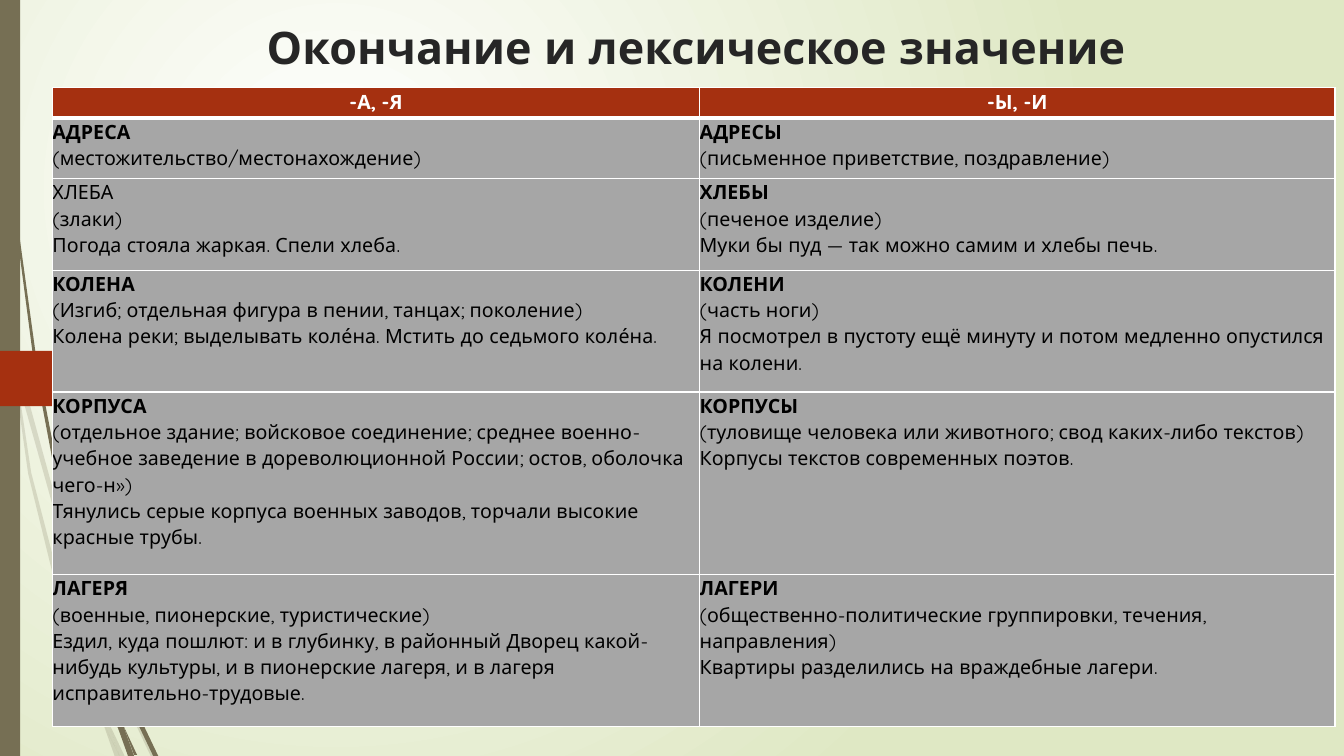
from dataclasses import dataclass

from lxml import etree
from pptx import Presentation
from pptx.dml.color import RGBColor
from pptx.enum.shapes import MSO_SHAPE
from pptx.enum.text import MSO_ANCHOR, PP_ALIGN
from pptx.oxml.ns import qn
from pptx.util import Inches, Pt

RECTANGLE = MSO_SHAPE.RECTANGLE
BOTTOM = MSO_ANCHOR.BOTTOM
LEFT, CENTER = PP_ALIGN.LEFT, PP_ALIGN.CENTER


@dataclass(frozen=True)
class Theme:
    font: str = "Quicksand"
    title_size: int = 32
    table_size: int = 14
    line_spacing: float = 1.07
    title: str = "262626"
    ink: str = "000000"
    white: str = "FFFFFF"
    meadow: str = "DFE8C4"
    olive: str = "766F54"
    rust: str = "A53010"
    grey: str = "A6A6A6"


TITLE = "Окончание и лексическое значение"
HEADINGS = ["-А, -Я", "-Ы, -И"]
COLUMN_WIDTHS = [6.42, 6.3]
ROW_HEIGHTS = [0.3, 0.6, 0.91, 1.21, 1.81, 1.51]

# Each entry: word, whether it is bold, lines below it
ENTRIES = [
    [("АДРЕСА", True, ["(местожительство/местонахождение)"]),
     ("АДРЕСЫ", True, ["(письменное приветствие, поздравление)"])],
    [("ХЛЕБА", False, ["(злаки)", "Погода стояла жаркая. Спели хлеба."]),
     ("ХЛЕБЫ", True, ["(печеное изделие)",
                      "Муки бы пуд ― так можно самим и хлебы печь."])],
    [("КОЛЕНА", True, ["(Изгиб; отдельная фигура в пении, танцах; поколение)",
                       "Колена реки; выделывать коле́на. Мстить до седьмого коле́на."]),
     ("КОЛЕНИ", True, ["(часть ноги)",
                       "Я посмотрел в пустоту ещё минуту и потом медленно "
                       "опустился на колени."])],
    [("КОРПУСА", True, ["(отдельное здание; войсковое соединение; среднее "
                        "военно-учебное заведение в дореволюционной России; "
                        "остов, оболочка чего-н»)",
                        "Тянулись серые корпуса военных заводов, торчали "
                        "высокие красные трубы."]),
     ("КОРПУСЫ", True, ["(туловище человека или животного; свод каких-либо текстов)",
                        "Корпусы текстов современных поэтов."])],
    [("ЛАГЕРЯ", True, ["(военные, пионерские, туристические)",
                       "Ездил, куда пошлют: и в глубинку, в районный Дворец "
                       "какой-нибудь культуры, и в пионерские лагеря, и в "
                       "лагеря исправительно-трудовые."]),
     ("ЛАГЕРИ", True, ["(общественно-политические группировки, течения, направления)",
                       "Квартиры разделились на враждебные лагери."])],
]

# Outlines of the grass blades, in inches
PALE_BLADES = [
    [(0.58, 5.22), (0.84, 6), (0.85, 5.87), (0.62, 5.2), (0.14, 3.45),
     (0.17, 3.76)],
    [(0.92, 6.07), (0.88, 5.96), (0.88, 6.1), (1.23, 6.94), (1.5, 7.51),
     (1.55, 7.51), (1.27, 6.92)],
    [(1.19, 7.51), (1.24, 7.51), (1.05, 7.11)],
    [(0.93, 6.83), (0.7, 6.19), (0.31, 4.69), (0.17, 3.76), (0.11, 3.5),
     (0.28, 4.7), (0.65, 6.21), (0.92, 6.93), (1.01, 7.14), (0.99, 7.07)],
    [(1.01, 7.14), (1.14, 7.51), (1.19, 7.51)],
    [(0.96, 6.92), (0.93, 6.83), (0.99, 7.07), (1.01, 7.14), (1.19, 7.51),
     (1.05, 7.11)],
]
DARK_BLADES = [
    [(0.07, 1.1), (0.17, 2.33), (0.33, 3.55), (0.56, 4.77), (0.57, 4.81),
     (0.55, 4.57), (0.55, 4.53), (0.36, 3.55), (0.19, 2.32), (0.08, 1.09),
     (0.05, 0.48), (0.04, 0), (0.03, 0), (0.04, 0.48)],
    [(1.13, 6.49), (1.1, 6.41), (1.11, 6.56), (1.32, 7.08), (1.52, 7.5),
     (1.57, 7.5), (1.36, 7.06)],
    [(1.1, 6.91), (0.98, 6.57), (0.72, 5.56), (0.64, 5.05), (0.57, 4.77),
     (0.68, 5.57), (0.93, 6.59), (1.11, 7.08), (1.17, 7.22), (1.16, 7.17)],
    [(1.33, 7.49), (1.36, 7.49), (1.22, 7.19)],
    [(1.17, 7.22), (1.27, 7.5), (1.31, 7.5)],
    [(1.16, 7.06), (1.1, 6.91), (1.16, 7.17), (1.17, 7.22), (1.3, 7.5),
     (1.33, 7.5), (1.22, 7.19)],
]
ARROW_TAB = [(0, 3.48), (1.46, 3.48), (1.48, 3.49), (1.73, 3.74), (1.74, 3.76),
             (1.73, 3.77), (1.48, 4.02), (1.46, 4.03), (0, 4.03)]


class Painter:
    def __init__(self, page, theme):
        self.page = page
        self.theme = theme

    def background(self):
        fill = self.page.background.fill
        fill.gradient()
        for stop, color in zip(fill.gradient_stops, (self.theme.white, self.theme.meadow)):
            stop.color.rgb = RGBColor.from_string(color)
        gradient = self.page.background._cSld.find(".//" + qn("a:gradFill"))
        gradient.remove(gradient.find(qn("a:lin")))
        circle = etree.SubElement(gradient, qn("a:path"), {"path": "circle"})
        etree.SubElement(circle, qn("a:fillToRect"),
                         dict(l="50000", t="50000", r="100000", b="100000"))

    def paint(self, shape, color, opacity=100):
        shape.shadow.inherit = False
        shape.fill.solid()
        shape.fill.fore_color.rgb = RGBColor.from_string(color)
        shape.line.fill.background()
        if opacity < 100:
            tint = shape._element.spPr.find(".//" + qn("a:srgbClr"))
            etree.SubElement(tint, qn("a:alpha"), val=str(opacity * 1000))

    def outline(self, points, color, opacity=100):
        corners = [(Inches(x), Inches(y)) for x, y in points]
        builder = self.page.shapes.build_freeform(*corners[0])
        builder.add_line_segments(corners[1:], close=True)
        self.paint(builder.convert_to_shape(), color, opacity)

    def bar(self, left, top, width, height, color):
        shape = self.page.shapes.add_shape(
            RECTANGLE, Inches(left), Inches(top), Inches(width), Inches(height))
        self.paint(shape, color)

    def span(self, para, text, size, color, bold):
        span = para.add_run()
        span.text = text
        span.font.name = self.theme.font
        span.font.size = Pt(size)
        span.font.bold = bold
        span.font.color.rgb = RGBColor.from_string(color)

    def title(self, text, left, top, width, height):
        box = self.page.shapes.add_textbox(
            Inches(left), Inches(top), Inches(width), Inches(height))
        box.text_frame.word_wrap = True
        box.text_frame.vertical_anchor = BOTTOM
        para = box.text_frame.paragraphs[0]
        para.alignment = CENTER
        self.span(para, text, self.theme.title_size, self.theme.title, True)

    def cell(self, cell, lines, color, fill, align, is_heading=False):
        cell.margin_left = cell.margin_right = cell.margin_top = cell.margin_bottom = 0
        properties = cell._tc.get_or_add_tcPr()
        for side in "LRTB":
            points = 3 if is_heading and side == "B" else 1
            border = etree.SubElement(properties, qn("a:ln" + side), w=str(Pt(points)))
            paint = etree.SubElement(border, qn("a:solidFill"))
            etree.SubElement(paint, qn("a:srgbClr"), val=self.theme.white)
        cell.fill.solid()
        cell.fill.fore_color.rgb = RGBColor.from_string(fill)
        para = cell.text_frame.paragraphs[0]
        para.alignment = align
        para.line_spacing = self.theme.line_spacing
        for index, (text, bold) in enumerate(lines):
            if index:
                para.add_line_break()
            self.span(para, text, self.theme.table_size, color, bold)

    def table(self, left, top):
        theme = self.theme
        table = self.page.shapes.add_table(
            len(ROW_HEIGHTS), len(COLUMN_WIDTHS), Inches(left), Inches(top),
            Inches(sum(COLUMN_WIDTHS)), Inches(sum(ROW_HEIGHTS))).table
        for column, width in zip(table.columns, COLUMN_WIDTHS):
            column.width = Inches(width)
        for row, height in zip(table.rows, ROW_HEIGHTS):
            row.height = Inches(height)
        for column, heading in enumerate(HEADINGS):
            self.cell(table.cell(0, column), [(heading, True)],
                      theme.white, theme.rust, CENTER, True)
        for row, entries in enumerate(ENTRIES, start=1):
            for column, (word, bold, details) in enumerate(entries):
                lines = [(word, bold)] + [(detail, False) for detail in details]
                self.cell(table.cell(row, column), lines, theme.ink, theme.grey, LEFT)


def main():
    deck = Presentation()
    deck.slide_width, deck.slide_height = Inches(13.33), Inches(7.5)
    theme = Theme()
    painter = Painter(deck.slides.add_slide(deck.slide_layouts[6]), theme)

    # Backdrop: gradient, grass blades, side bar and arrow tab
    painter.background()
    for blades, opacity in ((PALE_BLADES, 20), (DARK_BLADES, 100)):
        for blade in blades:
            painter.outline(blade, theme.olive, opacity)
    painter.bar(0, 0, 0.2, 7.5, theme.olive)
    painter.outline(ARROW_TAB, theme.rust)

    # Title and table of endings
    painter.title(TITLE, 2.03, 0.14, 9.75, 0.64)
    painter.table(0.52, 0.87)
    deck.save("out.pptx")


if __name__ == "__main__":
    main()
